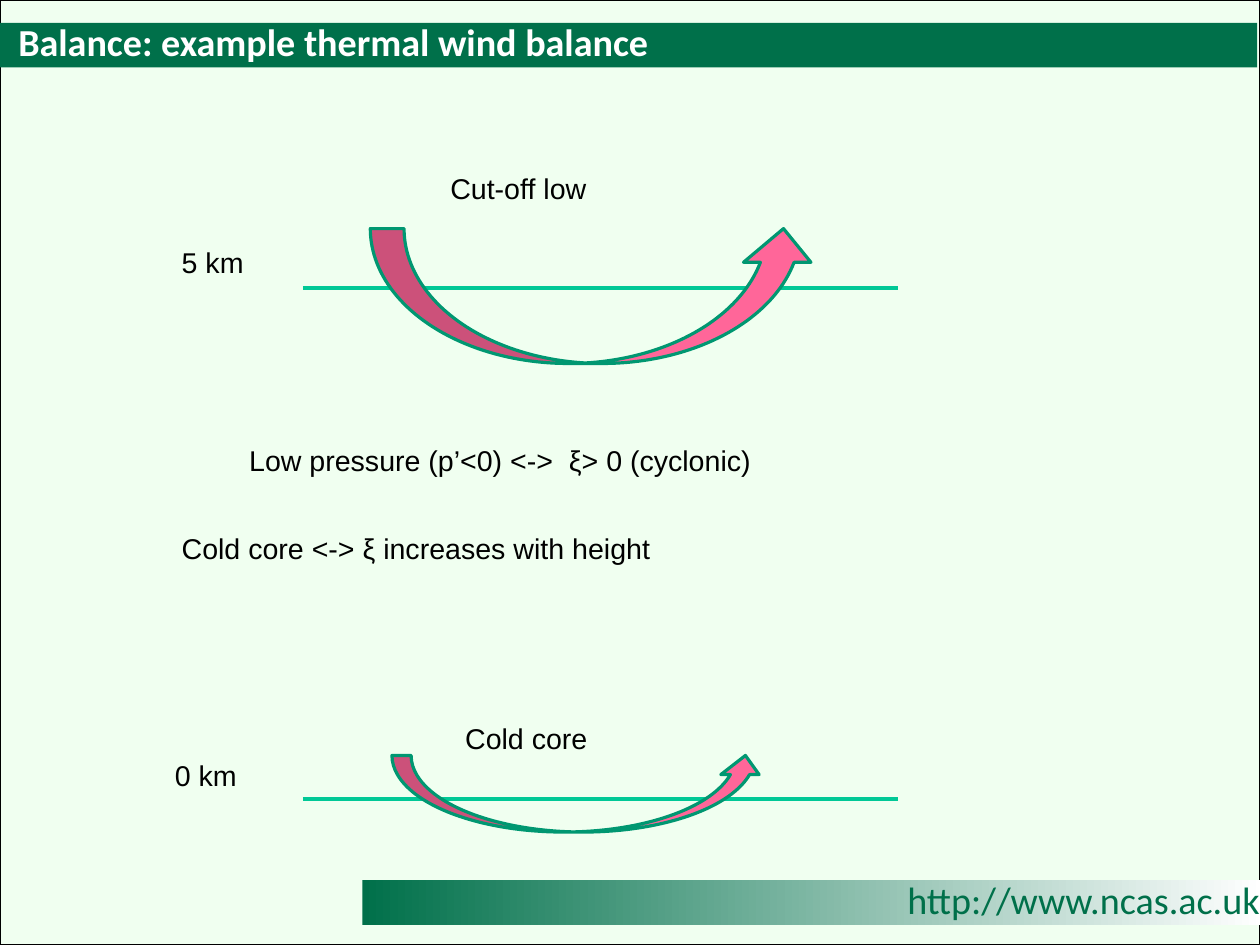
from lxml import etree
from pptx import Presentation
from pptx.dml.color import RGBColor
from pptx.enum.shapes import MSO_CONNECTOR, MSO_SHAPE
from pptx.enum.text import MSO_ANCHOR, MSO_AUTO_SIZE, PP_ALIGN
from pptx.oxml.ns import qn
from pptx.util import Inches, Pt

RECT, CURVED_ARROW = MSO_SHAPE.RECTANGLE, MSO_SHAPE.CURVED_UP_ARROW
STRAIGHT = MSO_CONNECTOR.STRAIGHT
TOP, MIDDLE = MSO_ANCHOR.TOP, MSO_ANCHOR.MIDDLE
NO_FIT, GROW = MSO_AUTO_SIZE.NONE, MSO_AUTO_SIZE.SHAPE_TO_FIT_TEXT
LEFT = PP_ALIGN.LEFT

# The page is 28 by 21 cm
WIDTH, HEIGHT = 28 / 2.54, 21 / 2.54
GREEN, MINT, WHITE, BLACK = "00704A", "F0FFF0", "FFFFFF", "000000"
LEVEL_GREEN, ARROW_GREEN, PINK = "00C896", "009771", "FF6699"


def rgb(value):
    return RGBColor.from_string(value)


def write(sp, text, font="Arial", size=18, color=BLACK, bold=False,
          spacing=0.93, insets=(0.11, 0.06), anchor=TOP, fit=GROW):
    tf = sp.text_frame
    tf.word_wrap = True
    tf.auto_size = fit
    tf.vertical_anchor = anchor
    tf.margin_left = tf.margin_right = Inches(insets[0])
    tf.margin_top = tf.margin_bottom = Inches(insets[1])
    p = tf.paragraphs[0]
    p.alignment = LEFT
    p.line_spacing = spacing
    p.space_before = Pt(0)
    r = p.add_run()
    r.text = text
    r.font.name = font
    r.font.size = Pt(size)
    r.font.bold = bold
    r.font.color.rgb = rgb(color)


class SlideBuilder:
    """Holds the current slide and the style of its elements."""

    def __init__(self, prs):
        self.s = prs.slides.add_slide(prs.slide_layouts[5])

    def shape(self, kind, box, fill, line=None, weight=0.75):
        """Add a preset shape; a pair of fill colours makes a gradient."""
        sp = self.s.shapes.add_shape(kind, *map(Inches, box))
        sp.shadow.inherit = False
        if isinstance(fill, tuple):
            sp.fill.gradient()
            sp.fill.gradient_angle = 0
            for stop, color in zip(sp.fill.gradient_stops, fill):
                stop.color.rgb = rgb(color)
        else:
            sp.fill.solid()
            sp.fill.fore_color.rgb = rgb(fill)
        if line:
            sp.line.color.rgb = rgb(line)
            sp.line.width = Pt(weight)
        else:
            sp.line.fill.background()

    def text(self, box, text, **fmt):
        write(self.s.shapes.add_textbox(*map(Inches, box)), text, **fmt)

    def title(self, box, text, **fmt):
        sp = self.s.shapes.title
        sp.left, sp.top, sp.width, sp.height = map(Inches, box)
        write(sp, text, **fmt)
        # Bring the title in front of its band
        sp.element.getparent().append(sp.element)

    def level(self, y):
        """Draw the horizontal line that marks a height level."""
        line = self.s.shapes.add_connector(
            STRAIGHT, Inches(2.65), Inches(y), Inches(7.86), Inches(y))
        line.line.color.rgb = rgb(LEVEL_GREEN)
        line.line.width = Pt(3)
        etree.SubElement(line.element.spPr, qn("a:effectLst"))

    def wind_arrow(self, box):
        self.shape(CURVED_ARROW, box, PINK, ARROW_GREEN, 2)


def main():
    prs = Presentation()
    prs.slide_width, prs.slide_height = Inches(WIDTH), Inches(HEIGHT)
    slide = SlideBuilder(prs)

    slide.shape(RECT, (0, 0, WIDTH, HEIGHT), MINT, BLACK)
    slide.shape(RECT, (3.17, 7.7, 7.88, 0.39), (GREEN, WHITE))
    slide.text((7.84, 7.64, 3.94, 0.49), "http://www.ncas.ac.uk", font="Calibri",
               size=24, color=GREEN, spacing=0.97, insets=(0.1, 0.05), fit=NO_FIT)
    slide.shape(RECT, (0, 0.2, 11, 0.39), GREEN)
    slide.title((0.16, 0.19, 9.92, 0.38), "Balance: example thermal wind balance",
                font="Calibri", size=24, color=WHITE, bold=True, spacing=0.97,
                insets=(0, 0), anchor=MIDDLE, fit=NO_FIT)

    for y in (2.52, 6.99):
        slide.level(y)
    for box in ((3.24, 2, 3.91, 1.18), (3.43, 6.61, 3.26, 0.67)):
        slide.wind_arrow(box)

    labels = (
        (3.83, 1.46, 3.65, "Cut-off low"),
        (1.48, 2.11, 1.5, "5 km"),
        (2.07, 3.84, 7.16, "Low pressure (p’<0) <->  ξ> 0 (cyclonic)"),
        (1.48, 4.61, 8.2, "Cold core <-> ξ increases with height"),
        (3.96, 6.27, 2.21, "Cold core"),
        (1.42, 6.6, 1.5, "0 km"),
    )
    for x, y, width, text in labels:
        slide.text((x, y, width, 0.59), text)

    prs.save("out.pptx")


if __name__ == "__main__":
    main()
